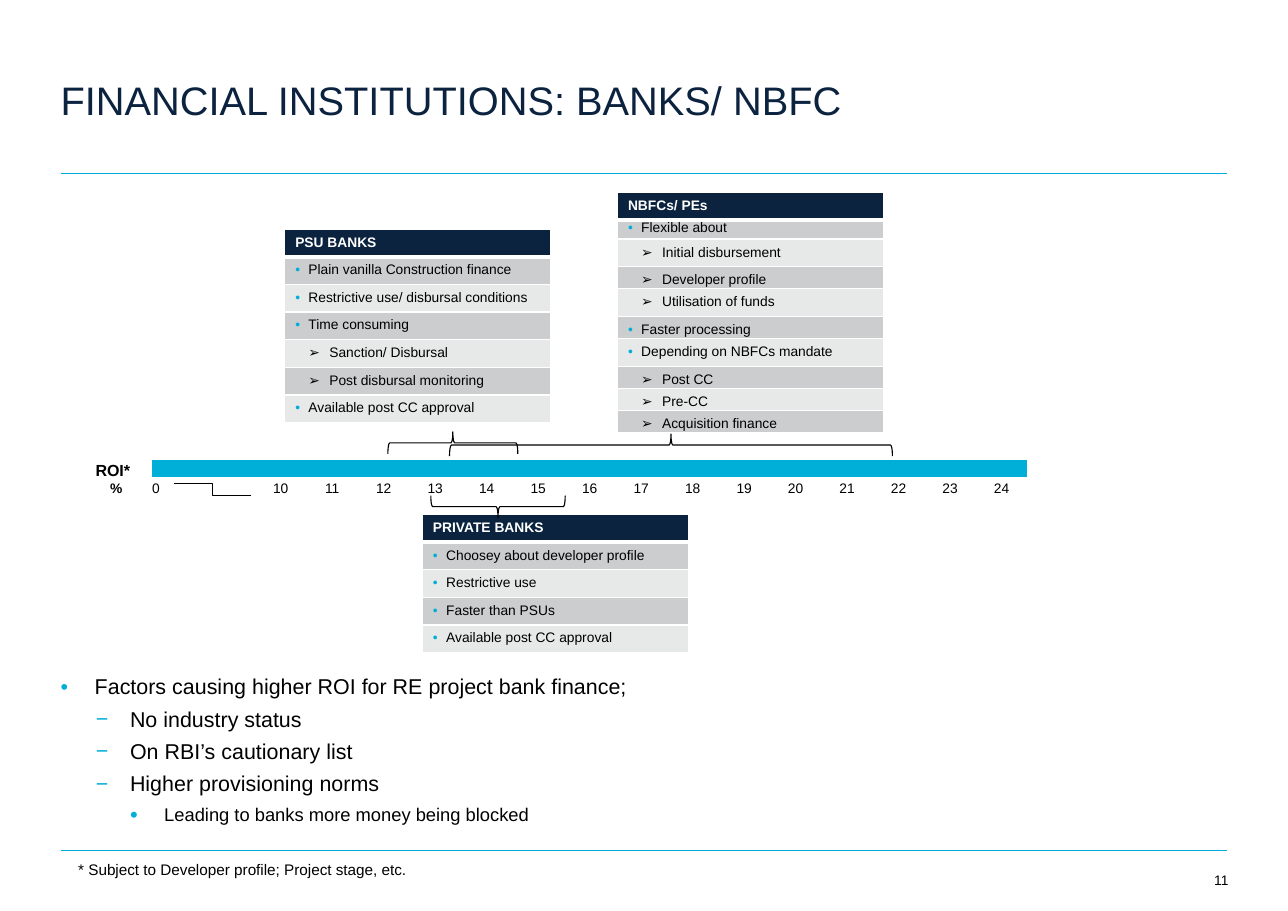
from lxml import etree
from pptx import Presentation
from pptx import util as u
from pptx.dml.color import RGBColor
from pptx.enum import shapes, text
from pptx.oxml import ns

FONT = "Arial"
NO_GRID_STYLE = "{2D5ABB26-0587-4C30-8999-92F81FD0307C}"
COLORS = {"navy": "0C2340", "cyan": "00AFD7", "black": "000000",
          "white": "FFFFFF", "dark_band": "CCCDCF", "light_band": "E7E8E8"}

TITLE = "FINANCIAL INSTITUTIONS: BANKS/ NBFC"
FACTORS = [
    ("Factors causing higher ROI for RE project bank finance;", 0),
    ("No industry status", 1),
    ("On RBI’s cautionary list", 1),
    ("Higher provisioning norms", 1),
    ("Leading to banks more money being blocked", 2),
]
FACTOR_STYLES = [("•", 14, 100), ("−", 14, 100), ("•", 12, 120)]

ROOMY, SNUG, TIGHT = (5, 5), (5, 0), (0, 0)
LENDER_BULLETS = [("•", 12, 12, "cyan"), ("➢", 31, 19, "black")]
PSU_BANKS = [
    ("Plain vanilla Construction finance", 0, ROOMY),
    ("Restrictive use/ disbursal conditions", 0, ROOMY),
    ("Time consuming", 0, ROOMY),
    ("Sanction/ Disbursal", 1, ROOMY),
    ("Post disbursal monitoring", 1, ROOMY),
    ("Available post CC approval", 0, ROOMY),
]
NBFCS = [
    ("Flexible about", 0, TIGHT),
    ("Initial disbursement", 1, ROOMY),
    ("Developer profile", 1, SNUG),
    ("Utilisation of funds", 1, ROOMY),
    ("Faster processing", 0, SNUG),
    ("Depending on NBFCs mandate", 0, ROOMY),
    ("Post CC", 1, SNUG),
    ("Pre-CC", 1, SNUG),
    ("Acquisition finance", 1, SNUG),
]
PRIVATE_BANKS = [
    ("Choosey about developer profile", 0, ROOMY),
    ("Restrictive use", 0, ROOMY),
    ("Faster than PSUs", 0, ROOMY),
    ("Available post CC approval", 0, ROOMY),
]


def px(length):
    return u.Emu(length * 9144)


def color(name):
    return RGBColor.from_string(COLORS[name])


def add_span(para, words, size, ink="black", bold=False):
    span = para.add_run()
    span.text = words
    span.font.name = FONT
    span.font.size = u.Pt(size)
    span.font.bold = bold
    span.font.color.rgb = color(ink)


def add_node(parent, tag, **attributes):
    return etree.SubElement(parent, ns.qn(tag), attributes)


def set_bullet(para, mark, left, hang, ink, percent=100):
    properties = para._p.get_or_add_pPr()
    properties.set("marL", str(px(left)))
    properties.set("indent", str(-px(hang)))
    add_node(add_node(properties, "a:buClr"), "a:srgbClr", val=COLORS[ink])
    add_node(properties, "a:buSzPct", val=str(percent * 1000))
    add_node(properties, "a:buFont", typeface=FONT)
    add_node(properties, "a:buChar", char=mark)


def set_margins(holder, left=0, top=0, right=0, bottom=0):
    holder.margin_left, holder.margin_top = px(left), px(top)
    holder.margin_right, holder.margin_bottom = px(right), px(bottom)


def fit_placeholder(shape, box):
    shape.left, shape.top, shape.width, shape.height = map(px, box)
    frame = shape.text_frame
    set_margins(frame)
    frame.word_wrap = True
    frame.auto_size = text.MSO_AUTO_SIZE.NONE
    frame.vertical_anchor = text.MSO_ANCHOR.TOP
    return frame


def add_title(page, box):
    para = fit_placeholder(page.shapes.title, box).paragraphs[0]
    para.alignment = text.PP_ALIGN.LEFT
    para.line_spacing = 0.9
    add_span(para, TITLE, 26, "navy")


def add_factors(page, box):
    frame = fit_placeholder(page.placeholders[1], box)
    for index, (words, level) in enumerate(FACTORS):
        para = frame.add_paragraph() if index else frame.paragraphs[0]
        mark, size, percent = FACTOR_STYLES[level]
        para.level = level
        set_bullet(para, mark, (31, 63, 94)[level], 31, "cyan", percent)
        para.line_spacing = 0.9
        para.space_before, para.space_after = u.Pt(0), u.Pt(6)
        add_span(para, words, size)


def add_label(page, box, words, size, align="LEFT", bold=False, margins=(0, 0), spacing=1.0):
    frame = page.shapes.add_textbox(*map(px, box)).text_frame
    frame.word_wrap = True
    set_margins(frame, *margins, *margins)
    para = frame.paragraphs[0]
    para.alignment = text.PP_ALIGN[align]
    para.line_spacing = spacing
    add_span(para, words, size, bold=bold)


def add_line(page, kind, start, end, ink, weight):
    line = page.shapes.add_connector(kind, *map(px, start + end))
    line.line.color.rgb = color(ink)
    line.line.width = u.Pt(weight)
    add_node(line._element.spPr, "a:effectLst")


def add_plain_table(page, rows, columns, box):
    table = page.shapes.add_table(rows, columns, *map(px, box)).table
    table.first_row = table.horz_banding = False
    table._tbl.tblPr.find(ns.qn("a:tableStyleId")).text = NO_GRID_STYLE
    return table


def set_borders(cell, top, bottom):
    properties = cell._tc.get_or_add_tcPr()
    for side, weight in (("L", 1), ("R", 1), ("T", top), ("B", bottom)):
        line = add_node(properties, f"a:ln{side}", w=str(u.Pt(weight)))
        add_node(add_node(line, "a:solidFill"), "a:srgbClr", val=COLORS["white"])


def add_lender(page, box, heading, traits):
    entries = [(heading, None, ROOMY)] + traits
    table = add_plain_table(page, len(entries), 1, box)
    for index, (words, level, (top, bottom)) in enumerate(entries):
        table.rows[index].height = px(max(17, 14 + top + bottom))
        cell = table.cell(index, 0)
        set_margins(cell, 10, top, 10, bottom)
        set_borders(cell, 3 if index == 1 else 1, 3 if index == 0 else 1)
        cell.fill.solid()
        para = cell.text_frame.paragraphs[0]
        if level is None:
            cell.fill.fore_color.rgb = color("navy")
            add_span(para, words, 9, "white", True)
        else:
            cell.fill.fore_color.rgb = color("dark_band" if index % 2 else "light_band")
            set_bullet(para, *LENDER_BULLETS[level])
            add_span(para, words, 9)


def add_scale(page, box):
    left, top, width, height = box
    ticks = ["%", "0", ""] + [str(rate) for rate in range(10, 25)]
    table = add_plain_table(page, 2, len(ticks), box)
    table.rows[0].height, table.rows[1].height = px(14), px(height - 14)
    for index, tick in enumerate(ticks):
        table.columns[index].width = px(width - 38) // (len(ticks) - 1) if index else px(38)
        for row, words in enumerate(("", tick)):
            cell = table.cell(row, index)
            set_margins(cell)
            cell.vertical_anchor = text.MSO_ANCHOR.BOTTOM
            para = cell.text_frame.paragraphs[0]
            if words:
                para.alignment = text.PP_ALIGN.CENTER if index > 2 else text.PP_ALIGN.LEFT
                add_span(para, words, 9, bold=index == 0)
            else:
                para._p.get_or_add_endParaRPr().set("sz", "900")
            if row == 0 and index:
                cell.fill.solid()
                cell.fill.fore_color.rgb = color("cyan")
            else:
                cell.fill.background()
    add_line(page, shapes.MSO_CONNECTOR.ELBOW, (left + 58, top + 21),
             (left + 128, top + 32), "black", 0.75)
    add_label(page, (left - 29, top - 5, 63, 28), "ROI*", 10.5, "CENTER", True, (10, 5))


def add_brace(page, box, rotation):
    left, top, width, height = box
    shift = (width - height) // 2
    brace = page.shapes.add_shape(shapes.MSO_SHAPE.RIGHT_BRACE, px(left + shift),
                                  px(top - shift), px(height), px(width))
    brace.rotation = rotation
    brace.shadow.inherit = False
    brace.fill.background()
    brace.line.color.rgb = color("black")
    brace.line.width = u.Pt(0.75)


def add_frame(page, box):
    left, top, width, height = box
    for level in (top, top + height):
        add_line(page, shapes.MSO_CONNECTOR.STRAIGHT, (left, level),
                 (left + width, level), "cyan", 0.5)
    bottom = top + height
    add_label(page, (left + 16, bottom + 7, 335, 16),
              "* Subject to Developer profile; Project stage, etc.", 10, spacing=1.1)
    add_label(page, (left + width - 23, bottom + 19, 24, 16), "11", 9, "RIGHT")


def main():
    deck = Presentation()
    deck.slide_width, deck.slide_height = px(1169), px(827)
    page = deck.slides.add_slide(deck.slide_layouts[1])
    add_frame(page, (55, 157, 1059, 615))
    add_title(page, (55, 74, 835, 39))
    add_factors(page, (55, 614, 1059, 139))
    add_lender(page, (258, 208, 242, 168), "PSU BANKS", PSU_BANKS)
    add_lender(page, (560, 175, 242, 208), "NBFCs/ PEs", NBFCS)
    add_lender(page, (383, 467, 242, 120), "PRIVATE BANKS", PRIVATE_BANKS)
    add_scale(page, (100, 418, 833, 32))
    add_brace(page, (352, 392, 118, 20), 270)
    add_brace(page, (408, 394, 402, 20), 270)
    add_brace(page, (391, 450, 122, 20), 90)
    deck.save("out.pptx")


if __name__ == "__main__":
    main()
